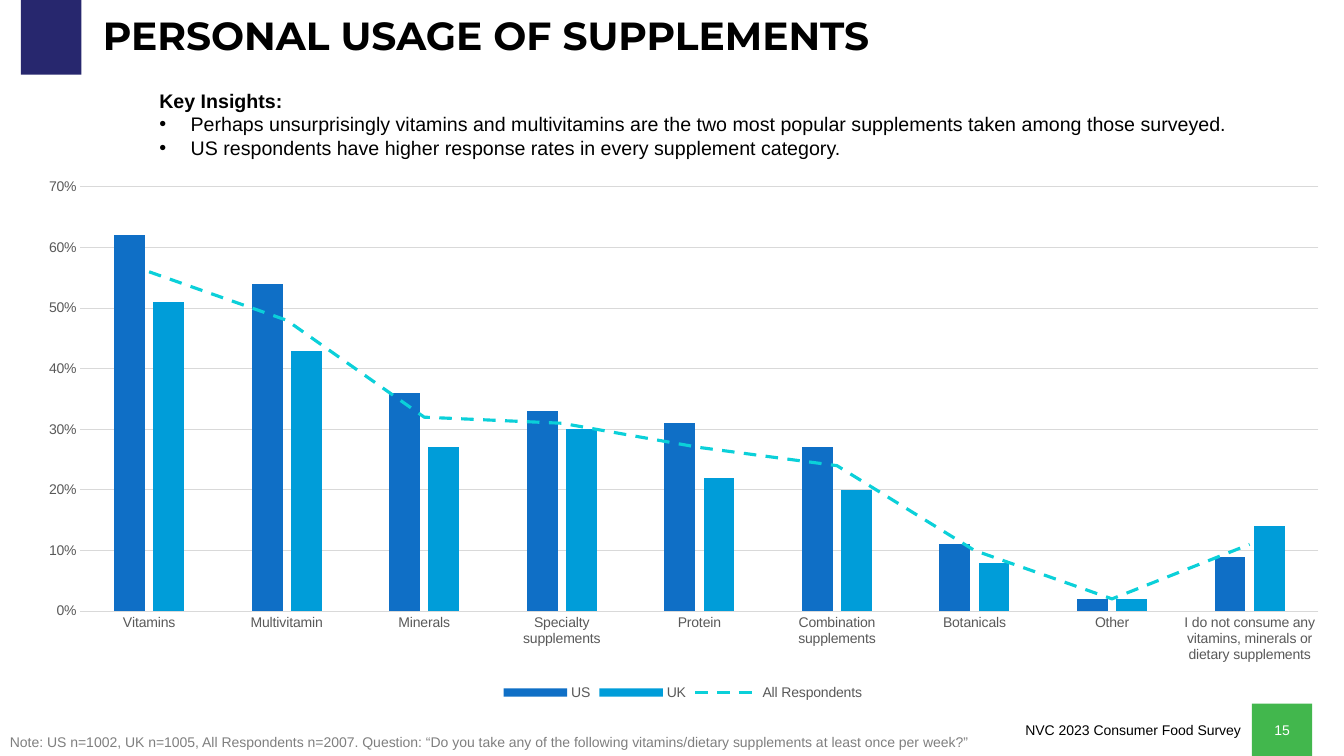
from lxml import etree
from pptx import Presentation
from pptx.chart.data import CategoryChartData
from pptx.dml.color import RGBColor
from pptx.enum.chart import XL_CHART_TYPE, XL_LEGEND_POSITION, XL_MARKER_STYLE, XL_TICK_MARK
from pptx.enum.dml import MSO_LINE
from pptx.enum.shapes import MSO_SHAPE
from pptx.enum.text import MSO_ANCHOR, MSO_AUTO_SIZE, PP_ALIGN
from pptx.oxml import parse_xml
from pptx.oxml.ns import nsdecls, qn
from pptx.util import Cm, Pt

NAVY = RGBColor(0x27, 0x27, 0x6E)
GREEN = RGBColor(0x42, 0xB7, 0x4D)
BLACK = RGBColor(0, 0, 0)
WHITE = RGBColor(0xFF, 0xFF, 0xFF)
NOTE_GREY = RGBColor(0x7F, 0x7F, 0x7F)
AXIS_GREY = RGBColor(0x59, 0x59, 0x59)
GRID_GREY = RGBColor(0xD9, 0xD9, 0xD9)
US_BLUE = RGBColor(0x0F, 0x6F, 0xC6)
UK_BLUE = RGBColor(0x00, 0x9D, 0xD9)
ALL_TEAL = RGBColor(0x0B, 0xD0, 0xD9)


def write(shape, *lines, size=10, color=BLACK, font="Arial", bold=False,
          align=PP_ALIGN.LEFT, anchor=MSO_ANCHOR.TOP, spacing=1.0):
    """Fill a shape with one paragraph per line in a single format."""
    frame = shape.text_frame
    frame.word_wrap = True
    frame.auto_size = MSO_AUTO_SIZE.NONE
    frame.vertical_anchor = anchor
    frame.text = "\n".join(lines)
    for paragraph in frame.paragraphs:
        paragraph.alignment = align
        paragraph.line_spacing = spacing
        paragraph.space_before = paragraph.space_after = Pt(0)
        run_font = paragraph.runs[0].font
        run_font.name, run_font.size, run_font.bold = font, Pt(size), bold
        run_font.color.rgb = color


def place(shape, left, top, width, height):
    shape.left, shape.top, shape.width, shape.height = map(Cm, (left, top, width, height))


prs = Presentation()
prs.slide_width, prs.slide_height = Cm(33.87), Cm(19.05)
slide = prs.slides.add_slide(prs.slide_layouts[1])
shapes = slide.shapes

# Navy corner block and green page number block
corner = shapes.add_shape(MSO_SHAPE.RECTANGLE, Cm(0.53), Cm(0), Cm(1.52), Cm(1.88))
page_number = shapes.add_shape(MSO_SHAPE.RECTANGLE, Cm(31.55), Cm(17.73), Cm(1.52), Cm(1.32))
for block, color in ((corner, NAVY), (page_number, GREEN)):
    block.shadow.inherit = False
    block.fill.solid()
    block.fill.fore_color.rgb = color
    block.line.fill.background()
write(page_number, "15", color=WHITE, align=PP_ALIGN.CENTER, anchor=MSO_ANCHOR.MIDDLE)

# Title
title = shapes.title
place(title, 2.34, 0.33, 29.21, 1.27)
write(title, "PERSONAL USAGE OF SUPPLEMENTS", size=28, font="Montserrat", bold=True,
      anchor=MSO_ANCHOR.MIDDLE, spacing=0.9)

# Key insights: a bold heading and two bullets
insights = slide.placeholders[1]
place(insights, 3.76, 2.11, 29.77, 3.84)
write(
    insights,
    "Key Insights:",
    "Perhaps unsurprisingly vitamins and multivitamins are the two most popular "
    "supplements taken among those surveyed.",
    "US respondents have higher response rates in every supplement category.",
    size=14,
)
heading, *bullets = insights.text_frame.paragraphs
heading.runs[0].font.bold = True
heading_format = heading._p.get_or_add_pPr()
heading_format.set("marL", "0")
heading_format.set("indent", "0")
etree.SubElement(heading_format, qn("a:buNone"))
for bullet in bullets:
    bullet_format = bullet._p.get_or_add_pPr()
    bullet_format.set("marL", str(Cm(0.79)))
    bullet_format.set("indent", str(-Cm(0.79)))
    etree.SubElement(bullet_format, qn("a:buFont"), typeface="Arial")
    etree.SubElement(bullet_format, qn("a:buChar"), char="•")

# Survey name and sample note
survey = shapes.add_textbox(Cm(20.12), Cm(18.06), Cm(11.4), Cm(0.69))
write(survey, "NVC 2023 Consumer Food Survey", align=PP_ALIGN.RIGHT)
note = shapes.add_textbox(Cm(0), Cm(18.36), Cm(26.01), Cm(0.69))
write(note, "Note: US n=1002, UK n=1005, All Respondents n=2007. Question: “Do you take any of "
      "the following vitamins/dietary supplements at least once per week?”", color=NOTE_GREY)

# Usage chart
usage = CategoryChartData(number_format="0%")
usage.categories = [
    "Vitamins", "Multivitamin", "Minerals", "Specialty supplements", "Protein",
    "Combination supplements", "Botanicals", "Other",
    "I do not consume any vitamins, minerals or dietary supplements",
]
usage.add_series("US", (0.62, 0.54, 0.36, 0.33, 0.31, 0.27, 0.11, 0.02, 0.09))
usage.add_series("UK", (0.51, 0.43, 0.27, 0.30, 0.22, 0.20, 0.08, 0.02, 0.14))
usage.add_series("All Respondents", (0.56, 0.48, 0.32, 0.31, 0.27, 0.24, 0.10, 0.02, 0.11))
chart = shapes.add_chart(XL_CHART_TYPE.COLUMN_CLUSTERED, Cm(0.56), Cm(4.24),
                         Cm(33.3), Cm(13.51), usage).chart
chart.has_title = False
chart.font.name, chart.font.size = "Arial", Pt(10)
chart.font.color.rgb = AXIS_GREY

columns = chart.plots[0]
columns.gap_width, columns.overlap = 219, -27
columns.vary_by_categories = False

# The third series becomes a line on the same axes
bar_xml = columns._element
line_xml = parse_xml(
    f'<c:lineChart {nsdecls("c")}><c:grouping val="standard"/>'
    '<c:varyColors val="0"/><c:marker val="1"/></c:lineChart>'
)
all_xml = bar_xml.findall(qn("c:ser"))[2]
for bar_only in all_xml.findall(qn("c:invertIfNegative")):
    all_xml.remove(bar_only)
line_xml.insert(2, all_xml)
for axis_id in bar_xml.findall(qn("c:axId")):
    etree.SubElement(line_xml, qn("c:axId"), val=axis_id.get("val"))
bar_xml.addnext(line_xml)

for series, color in zip(columns.series, (US_BLUE, UK_BLUE)):
    series.format.fill.solid()
    series.format.fill.fore_color.rgb = color
all_respondents = chart.plots[1].series[0]
all_respondents.smooth = False
all_respondents.marker.style = XL_MARKER_STYLE.NONE
all_line = all_respondents.format.line
all_line.color.rgb, all_line.width = ALL_TEAL, Pt(2.25)
all_line.dash_style = MSO_LINE.DASH

# Axes, grid and legend
categories, shares = chart.category_axis, chart.value_axis
for axis in (categories, shares):
    axis.major_tick_mark = axis.minor_tick_mark = XL_TICK_MARK.NONE
    axis.tick_labels.font.size = Pt(10)
    axis.tick_labels.font.color.rgb = AXIS_GREY
shares.minimum_scale, shares.maximum_scale, shares.major_unit = 0, 0.7, 0.1
shares.tick_labels.number_format = "0%"
shares.tick_labels.number_format_is_linked = False
shares.format.line.fill.background()
for rule in (categories.format.line, shares.major_gridlines.format.line):
    rule.color.rgb, rule.width = GRID_GREY, Pt(0.75)
chart.has_legend = True
chart.legend.position = XL_LEGEND_POSITION.BOTTOM
chart.legend.include_in_layout = False

# Inner plot area as shares of the chart frame
plot_area = bar_xml.getparent()
for old_layout in plot_area.findall(qn("c:layout")):
    plot_area.remove(old_layout)
layout = etree.Element(qn("c:layout"))
manual = etree.SubElement(layout, qn("c:manualLayout"))
for tag, value in (("layoutTarget", "inner"), ("xMode", "edge"), ("yMode", "edge"),
                   ("x", "0.044"), ("y", "0.035"), ("w", "0.937"), ("h", "0.791")):
    etree.SubElement(manual, qn(f"c:{tag}"), val=value)
plot_area.insert(0, layout)

prs.save("out.pptx")
